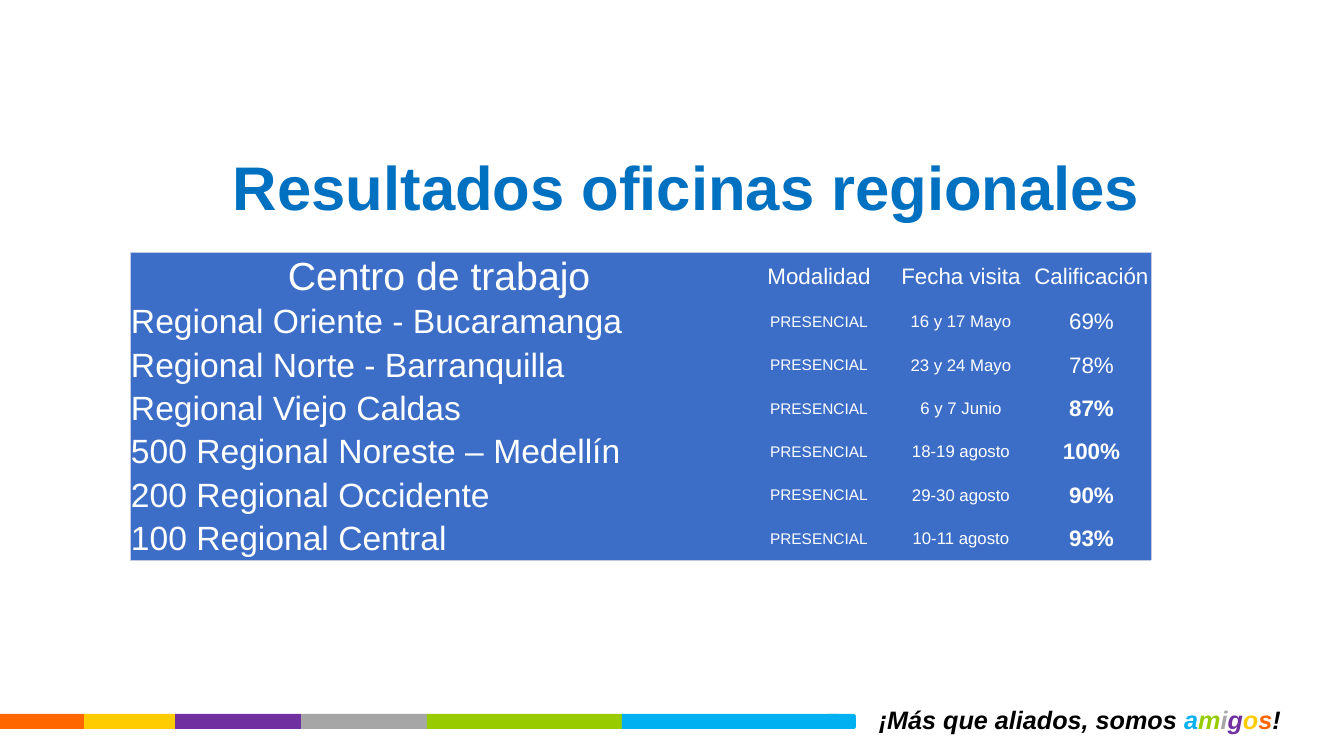
from lxml import etree
from pptx import Presentation
from pptx.dml.color import RGBColor
from pptx.enum.shapes import MSO_SHAPE
from pptx.enum.text import MSO_ANCHOR, PP_ALIGN
from pptx.oxml.ns import qn
from pptx.util import Pt

RECT = MSO_SHAPE.RECTANGLE
ROUNDED = MSO_SHAPE.ROUNDED_RECTANGLE
TOP = MSO_ANCHOR.TOP
MIDDLE = MSO_ANCHOR.MIDDLE
LEFT = PP_ALIGN.LEFT
CENTER = PP_ALIGN.CENTER

COLORS = {
    "black": "000000", "white": "FFFFFF", "title": "0070C0",
    "table": "3C6EC8", "border": "C1C9E4",
    "orange": "FF6600", "yellow": "FFCC00", "purple": "7030A0",
    "gray": "A6A6A6", "green": "99CC00", "blue": "00B0F0",
}


def px(length):
    return round(length * 9144000 / 1008)


def rgb(name):
    return RGBColor.from_string(COLORS[name])


class SlideBuilder:
    font_name = "Arial"

    def __init__(self, page):
        self.page = page

    def style(self, paragraph, size, color, bold=False, italic=False, align=LEFT):
        paragraph.alignment = align
        font = paragraph.font
        font.name = self.font_name
        font.size = Pt(size)
        font.bold = bold
        font.italic = italic
        font.color.rgb = rgb(color)

    def bar(self, kind, left, top, width, height, color):
        shape = self.page.shapes.add_shape(kind, px(left), px(top), px(width), px(height))
        shape.shadow.inherit = False
        shape.fill.solid()
        shape.fill.fore_color.rgb = rgb(color)
        shape.line.fill.background()

    def text(self, left, top, width, height, spans, size, anchor=TOP, **style):
        box = self.page.shapes.add_textbox(px(left), px(top), px(width), px(height))
        frame = box.text_frame
        frame.word_wrap = True
        frame.vertical_anchor = anchor
        paragraph = frame.paragraphs[0]
        self.style(paragraph, size, spans[0][1], **style)
        for words, color in spans:
            span = paragraph.add_run()
            span.text = words
            span.font.color.rgb = rgb(color)
        return paragraph

    def borders(self, cell, visible):
        properties = cell._tc.get_or_add_tcPr()
        for side in "LRTB":
            line = etree.SubElement(properties, qn(f"a:ln{side}"), w=str(Pt(0.5)))
            if side in visible:
                fill = etree.SubElement(line, qn("a:solidFill"))
                etree.SubElement(fill, qn("a:srgbClr"), val=COLORS["border"])
            else:
                etree.SubElement(line, qn("a:noFill"))

    def cell(self, cell, words, size, visible, **style):
        self.borders(cell, visible)
        cell.fill.solid()
        cell.fill.fore_color.rgb = rgb("table")
        cell.vertical_anchor = MIDDLE
        cell.margin_left = cell.margin_right = cell.margin_top = px(1)
        cell.margin_bottom = 0
        cell.text = words
        self.style(cell.text_frame.paragraphs[0], size, "white", **style)

    def table(self, left, top, widths, heights, rows, header_sizes, body_sizes, bold_from):
        last_row, last_column = len(rows) - 1, len(widths) - 1
        table = self.page.shapes.add_table(
            len(rows), len(widths), px(left), px(top), px(sum(widths)), px(sum(heights))
        ).table
        table.first_row = table.horz_banding = False
        for column, width in zip(table.columns, widths):
            column.width = px(width)
        for row, height in zip(table.rows, heights):
            row.height = px(height)
        for r, values in enumerate(rows):
            sizes = body_sizes if r else header_sizes
            for c, (words, size) in enumerate(zip(values, sizes)):
                edges = {"L": c == 0, "R": c == last_column, "T": r == 0, "B": r == last_row}
                visible = [side for side, outer in edges.items() if outer]
                self.cell(
                    table.cell(r, c), words, size, visible,
                    bold=c == last_column and r >= bold_from,
                    align=LEFT if r and c == 0 else CENTER,
                )


def main():
    deck = Presentation()
    deck.slide_width, deck.slide_height = px(1344), px(756)
    slide = SlideBuilder(deck.slides.add_slide(deck.slide_layouts[6]))

    slogan = [("¡Más que aliados, somos ", "black")]
    slogan += zip("amigos!", ["blue", "green", "gray", "purple", "yellow", "orange", "black"])
    slide.text(869, 699, 479, 40, slogan, 18, bold=True, italic=True)

    left = 0
    for color, width in [("orange", 84), ("yellow", 91), ("purple", 126),
                         ("gray", 126), ("green", 195), ("blue", 217)]:
        slide.bar(RECT, left, 714, width, 15, color)
        left += width
    slide.bar(ROUNDED, 826, 714, 30, 15, "blue")

    title = slide.text(107, 151, 1160, 83, [("Resultados oficinas regionales", "title")],
                       44, anchor=MIDDLE, bold=True, align=CENTER)
    title.line_spacing = 0.8

    visits = [
        ("Regional Oriente - Bucaramanga", "16 y 17 Mayo", "69%"),
        ("Regional Norte - Barranquilla", "23 y 24 Mayo", "78%"),
        ("Regional Viejo Caldas", "6 y 7 Junio", "87%"),
        ("500 Regional Noreste – Medellín", "18-19 agosto", "100%"),
        ("200 Regional Occidente", "29-30 agosto", "90%"),
        ("100 Regional Central", "10-11 agosto", "93%"),
    ]
    rows = [("Centro de trabajo", "Modalidad", "Fecha visita", "Calificación")]
    rows += [(office, "PRESENCIAL", date, score) for office, date, score in visits]
    slide.table(130, 252, [618, 142, 142, 119], [48, 43, 44, 43, 43, 44, 43], rows,
                header_sizes=[28, 16, 16, 16], body_sizes=[24, 11, 12, 16], bold_from=3)

    deck.save("out.pptx")


if __name__ == "__main__":
    main()
